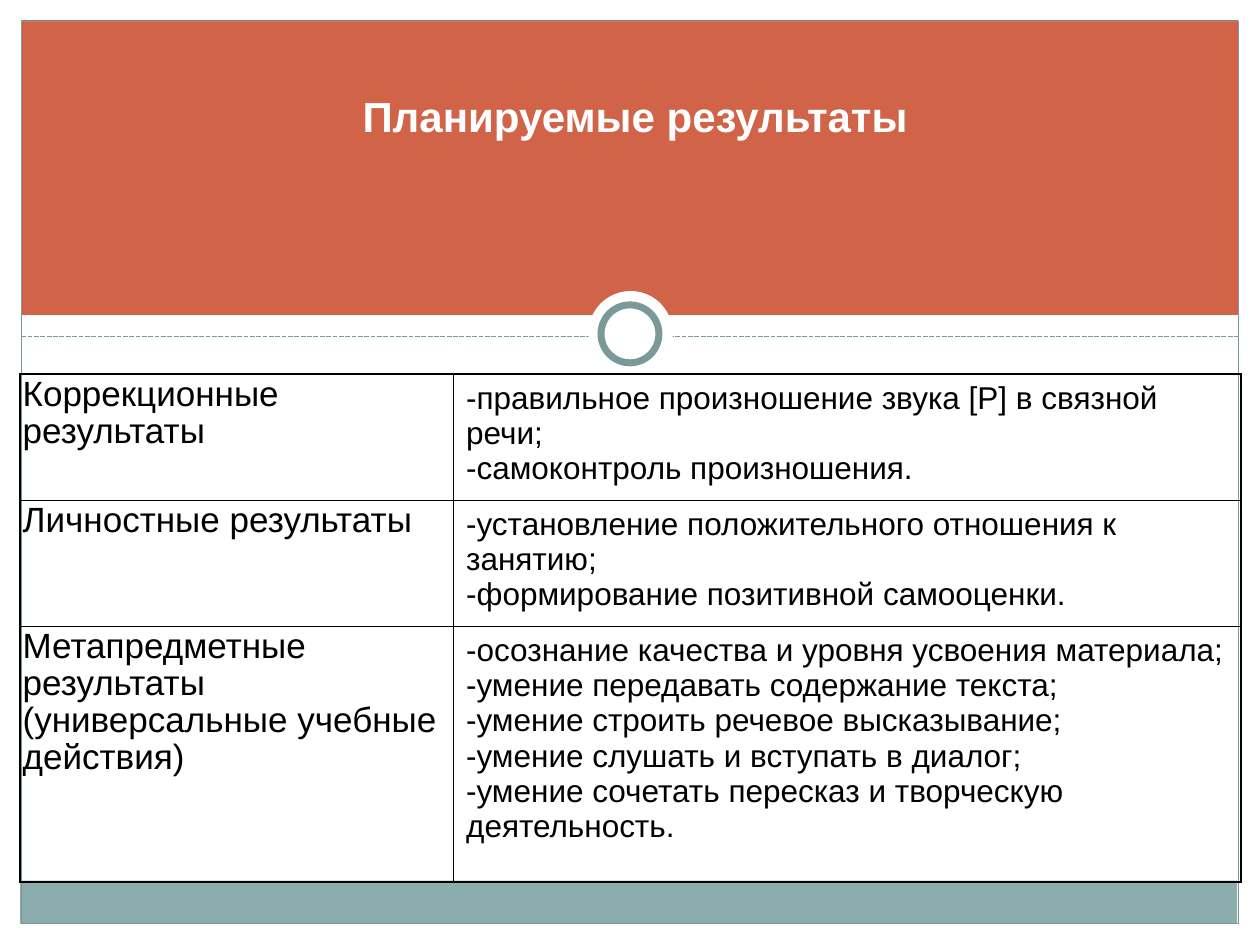
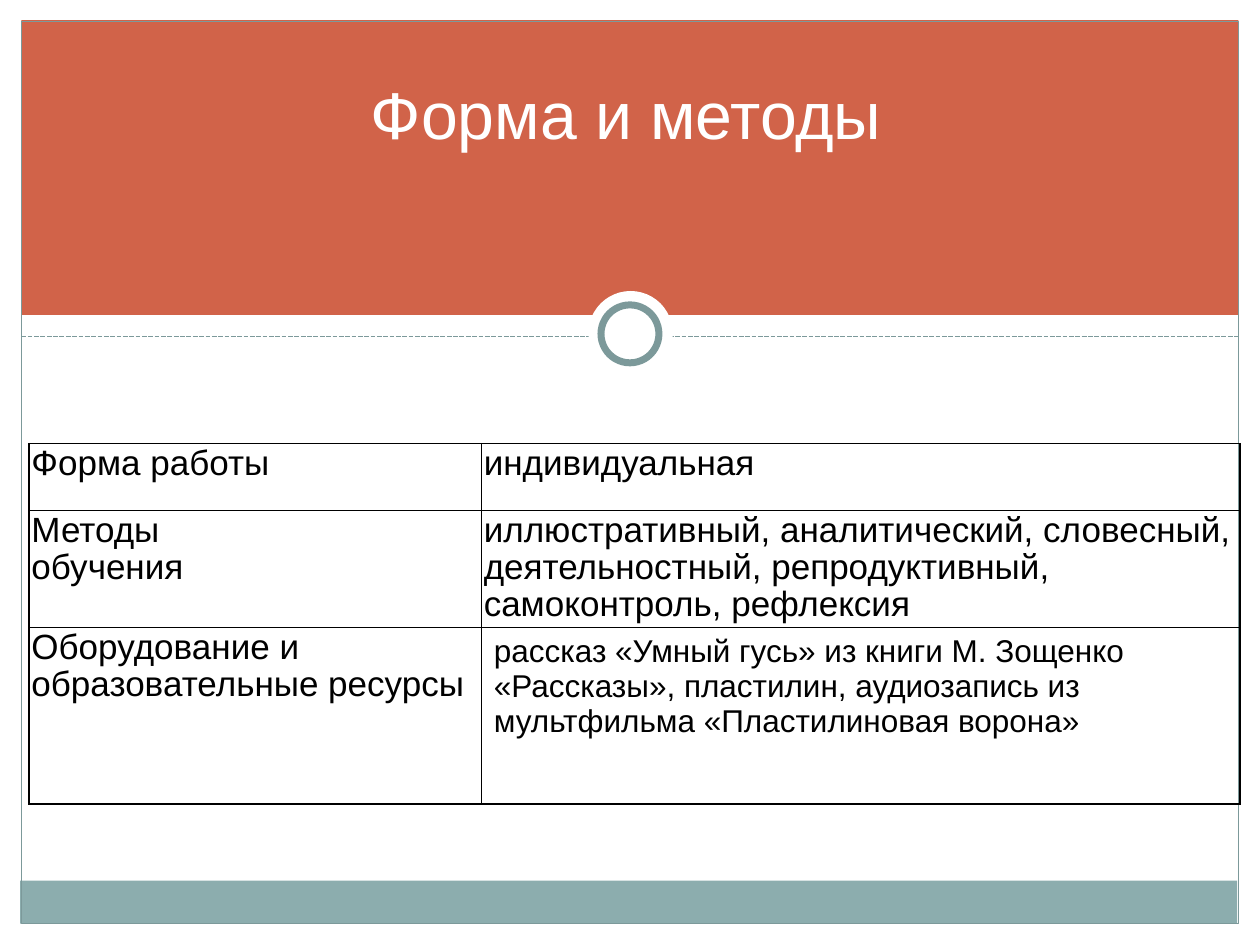
from lxml.etree import SubElement
from pptx import Presentation
from pptx.dml.color import RGBColor
from pptx.enum.dml import MSO_LINE
from pptx.enum.shapes import MSO_CONNECTOR, MSO_SHAPE
from pptx.enum.text import MSO_ANCHOR, PP_ALIGN
from pptx.oxml import parse_xml
from pptx.oxml.ns import nsdecls, qn
from pptx.util import Inches, Pt

COLORS = {"white": "FFFFFF", "header": "D16349", "footer": "8CADAE",
          "frame": "7C999A", "text": "000000"}
FONT = "Arial"
BANDS = [
    ((0, 7.33, 10, 0.17), "white"),
    ((0, 0, 10, 0.17), "white"),
    ((9.83, 0.02, 0.17, 7.48), "white"),
    ((0.17, 2.5, 9.66, 0.33), "white"),
    ((0.17, 0.16, 9.66, 2.34), "header"),
    ((0.16, 6.99, 9.66, 0.34), "footer"),
]

RESULTS = [
    ("Коррекционные результаты",
     ["-правильное произношение звука [Р] в связной речи;",
      "-самоконтроль произношения."]),
    ("Личностные результаты",
     ["-установление положительного отношения к занятию;",
      "-формирование позитивной самооценки."]),
    ("Метапредметные результаты (универсальные учебные действия)",
     ["-осознание качества и уровня усвоения материала;",
      "-умение передавать содержание текста;",
      "-умение строить речевое высказывание;",
      "-умение слушать и вступать в диалог;",
      "-умение сочетать пересказ и творческую деятельность."]),
]
METHODS = [
    ("Форма работы", "индивидуальная"),
    ("Методы\vобучения",
     "иллюстративный, аналитический, словесный, деятельностный, "
     "репродуктивный, самоконтроль, рефлексия"),
    ("Оборудование и образовательные ресурсы",
     ["рассказ «Умный гусь» из книги М. Зощенко «Рассказы», пластилин, "
      "аудиозапись из мультфильма «Пластилиновая ворона»"]),
]


def rgb(name):
    """Return a palette colour."""
    return RGBColor.from_string(COLORS[name])


def add_box(s, kind, box, fill=None, line=None, width=0.75):
    """Add a preset shape with optional fill and line."""
    sp = s.shapes.add_shape(kind, *map(Inches, box))
    sp.shadow.inherit = False
    if fill:
        sp.fill.solid()
        sp.fill.fore_color.rgb = rgb(fill)
    else:
        sp.fill.background()
    if line:
        sp.line.color.rgb = rgb(line)
        sp.line.width = Pt(width)
    else:
        sp.line.fill.background()


def add_frame(s):
    """Draw the bands, frame, dashed divider and ring."""
    for box, color in BANDS:
        add_box(s, MSO_SHAPE.RECTANGLE, box, color)
    add_box(s, MSO_SHAPE.RECTANGLE, (0.17, 0.17, 9.66, 7.16), line="frame")
    divider = s.shapes.add_connector(
        MSO_CONNECTOR.STRAIGHT, Inches(0.17), Inches(2.67), Inches(9.83), Inches(2.67))
    divider.line.color.rgb = rgb("frame")
    divider.line.width = Pt(0.9)
    divider.line.dash_style = MSO_LINE.SQUARE_DOT
    SubElement(divider._element.spPr, qn("a:effectLst"))
    add_box(s, MSO_SHAPE.OVAL, (4.67, 2.31, 0.67, 0.67), "white")
    add_box(s, MSO_SHAPE.OVAL, (4.77, 2.42, 0.46, 0.46), "white", "frame", 4)


def style_font(p, size, color, bold=False):
    """Set the font of a paragraph."""
    p.font.name = FONT
    p.font.size = Pt(size)
    p.font.bold = bold
    p.font.color.rgb = rgb(color)


def add_title(s, text, box, size, bold=False):
    """Add a centred white title standing on the bottom of its box."""
    tf = s.shapes.add_textbox(*map(Inches, box)).text_frame
    tf.word_wrap = True
    tf.vertical_anchor = MSO_ANCHOR.BOTTOM
    p = tf.paragraphs[0]
    p.text = text
    p.alignment = PP_ALIGN.CENTER
    style_font(p, size, "white", bold)


def add_borders(cell):
    """Give a cell thin black borders on all sides."""
    tcPr = cell._tc.get_or_add_tcPr()
    for i, side in enumerate("LRTB"):
        tcPr.insert(i, parse_xml(
            f'<a:ln{side} {nsdecls("a")} w="12700"><a:solidFill>'
            f'<a:srgbClr val="{COLORS["text"]}"/></a:solidFill></a:ln{side}>'))


def fill_cell(cell, content):
    """Write a tight label, or a list of smaller paragraphs."""
    cell.fill.background()
    add_borders(cell)
    is_label = isinstance(content, str)
    if is_label:
        cell.margin_left = cell.margin_right = Inches(0.02)
        cell.margin_top = cell.margin_bottom = Inches(0.02)
    tf = cell.text_frame
    for i, line in enumerate([content] if is_label else content):
        p = tf.add_paragraph() if i else tf.paragraphs[0]
        p.text = line
        style_font(p, 20 if is_label else 18, "text")
        if is_label:
            p.line_spacing = 0.95


def add_grid(s, left, top, widths, heights, rows):
    """Add a bordered table without banding."""
    table = s.shapes.add_table(
        len(rows), len(widths), Inches(left), Inches(top),
        Inches(sum(widths)), Inches(sum(heights))).table
    table.first_row = table.horz_banding = False
    for column, width in zip(table.columns, widths):
        column.width = Inches(width)
    for row, height, contents in zip(table.rows, heights, rows):
        row.height = Inches(height)
        for cell, content in zip(row.cells, contents):
            fill_cell(cell, content)


def add_framed_slide(prs):
    """Add a blank slide with the shared frame."""
    s = prs.slides.add_slide(prs.slide_layouts[6])
    add_frame(s)
    return s


def main():
    """Build and save the presentation."""
    prs = Presentation()
    prs.slide_width, prs.slide_height = Inches(10), Inches(7.5)

    s = add_framed_slide(prs)
    add_title(s, "Планируемые результаты", (0.79, 0.58, 8.5, 0.59), 24, True)
    add_grid(s, 0.16, 2.97, (3.44, 6.25), (0.98, 0.98, 2.03), RESULTS)

    s = add_framed_slide(prs)
    add_grid(s, 0.23, 3.52, (3.59, 6.02), (0.53, 0.93, 1.4), METHODS)
    add_title(s, "Форма и методы", (0.72, 0.17, 8.5, 1.09), 37.8)

    prs.save("out.pptx")


if __name__ == "__main__":
    main()
